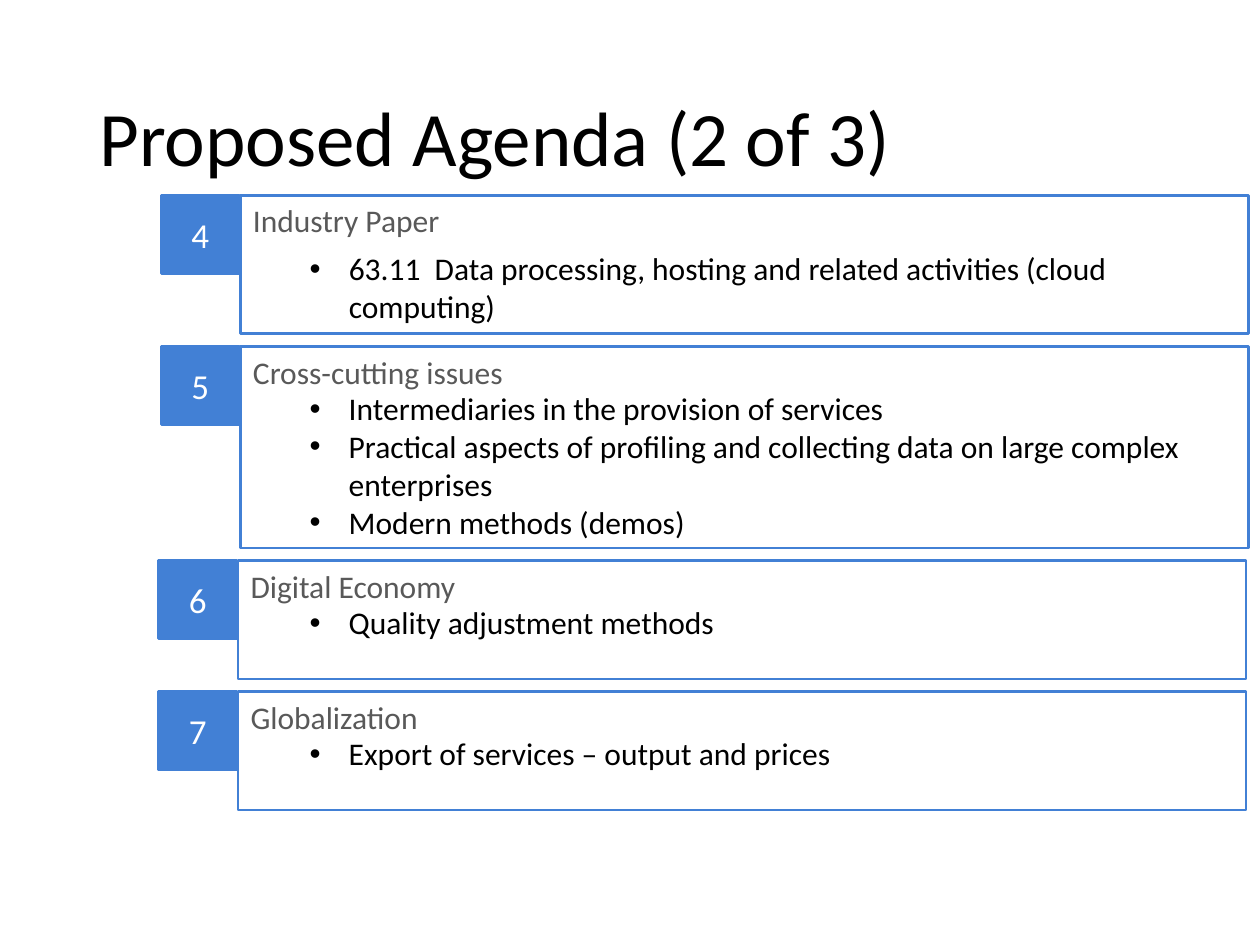
from pptx import Presentation
from pptx.dml.color import RGBColor as RGB
from pptx.enum.shapes import MSO_SHAPE as Shape
from pptx.enum.text import MSO_ANCHOR as Anchor, PP_ALIGN as Align
from pptx.oxml.ns import qn
from pptx.util import Inches, Pt
from lxml.etree import SubElement

BLUE = RGB(0x42, 0x80, 0xD5)
GRAY = RGB(0x59, 0x59, 0x59)
BLACK = RGB(0, 0, 0)
WHITE = RGB(255, 255, 255)

CELL = Inches(0.1)  # the slide is a grid of 100 columns by 75 rows
COLS, ROWS = 100, 75
TOP, GAP = 15.5, 1
TAG, STEP, WIDE = 6.2, 6.3, 80  # number square, panel offset, panel width
LIST = 23.6  # column where every list starts

# number, heading, left, height, list drop, list width, list height, points
ITEMS = [
    ("4", "Industry Paper", 12.8, 11, 3.8, 75.5, 7.1,
     ["63.11  Data processing, hosting and related activities (cloud computing)"]),
    ("5", "Cross-cutting issues", 12.8, 16, 2.9, 72.7, 16.2,
     ["Intermediaries in the provision of services",
      "Practical aspects of profiling and collecting data on large complex enterprises",
      "Modern methods (demos)"]),
    ("6", "Digital Economy", 12.6, 9.4, 2.9, 72.7, 7.1,
     ["Quality adjustment methods"]),
    ("7", "Globalization", 12.6, 9.4, 2.9, 72.7, 7.1,
     ["Export of services – output and prices"]),
]


def grid(*box):
    return [round(n * CELL) for n in box]


def style(para, size, color, align=Align.LEFT):
    para.alignment = align
    font = para.font
    for key, val in {"name": "Calibri", "size": Pt(size)}.items():
        setattr(font, key, val)
    font.color.rgb = color


def add_title(slide, text, box):
    title = slide.shapes.title
    for key, val in zip(("left", "top", "width", "height"), grid(*box)):
        setattr(title, key, val)
    frame = title.text_frame
    frame.text = text
    frame.vertical_anchor = Anchor.MIDDLE
    para = frame.paragraphs[0]
    para.line_spacing = 0.9
    style(para, 44, BLACK)


def add_rect(slide, box, text, fill, size, color, align, anchor, wrap):
    rect = slide.shapes.add_shape(Shape.RECTANGLE, *grid(*box))
    rect.shadow.inherit = False
    if fill is None:
        rect.fill.background()
    else:
        rect.fill.solid()
        rect.fill.fore_color.rgb = fill
    rect.line.color.rgb = BLUE
    rect.line.width = Pt(1.5)
    frame = rect.text_frame
    frame.text = text
    frame.vertical_anchor = anchor
    frame.word_wrap = wrap
    style(frame.paragraphs[0], size, color, align)


def add_list(slide, box, points):
    frame = slide.shapes.add_textbox(*grid(*box)).text_frame
    frame.word_wrap = True
    for i, point in enumerate(points):
        para = frame.add_paragraph() if i else frame.paragraphs[0]
        para.text = point
        props = para._p.get_or_add_pPr()
        props.set("marL", str(Inches(0.31)))
        props.set("indent", str(-Inches(0.31)))
        SubElement(props, qn("a:buFont"), typeface="Arial")
        SubElement(props, qn("a:buChar"), char="•")
        style(para, 18, BLACK)


def add_item(slide, left, top, item):
    """Place a number square, its framed panel and the list inside it."""
    number, head, _, high, drop, span, deep, points = item
    add_rect(slide, (left, top, TAG, TAG), number, BLUE, 20, WHITE,
             Align.CENTER, Anchor.MIDDLE, True)
    add_rect(slide, (left + STEP, top, WIDE, high), head, None, 18, GRAY,
             Align.LEFT, Anchor.TOP, False)
    add_list(slide, (LIST, top + drop, span, deep), points)


def main():
    deck = Presentation()
    deck.slide_width, deck.slide_height = grid(COLS, ROWS)
    slide = deck.slides.add_slide(deck.slide_layouts[5])
    add_title(slide, "Proposed Agenda (2 of 3)", (6.9, 4, 86.2, 14.5))
    top = TOP
    for item in ITEMS:
        add_item(slide, item[2], top, item)
        top += item[3] + GAP
    deck.save("out.pptx")


if __name__ == "__main__":
    main()
